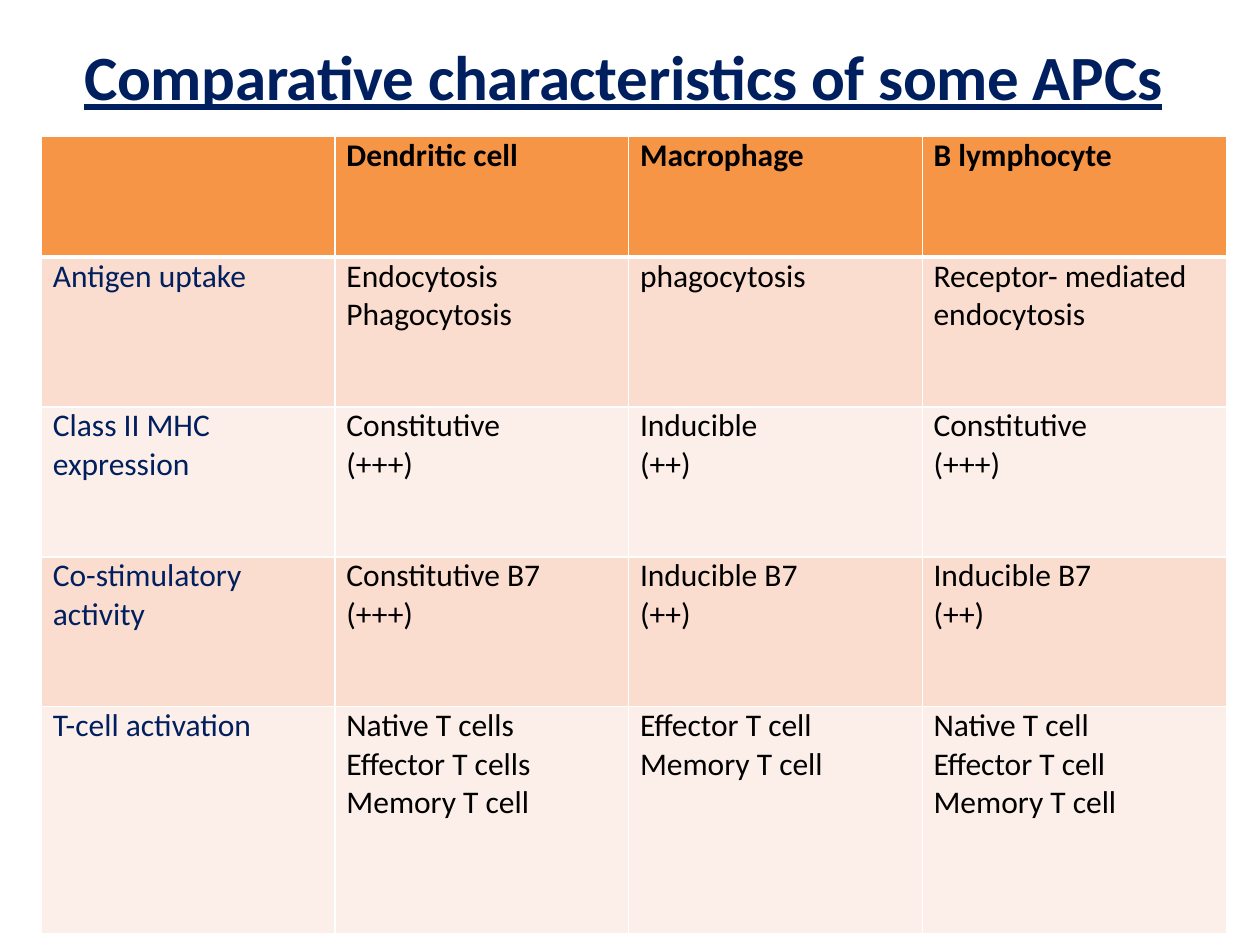
from dataclasses import dataclass

from lxml.etree import SubElement
from pptx import Presentation
from pptx.dml.color import RGBColor
from pptx.enum.text import MSO_ANCHOR, PP_ALIGN
from pptx.oxml.ns import qn
from pptx.util import Inches, Pt


@dataclass(frozen=True)
class Theme:
    font: str = "Calibri"
    navy: str = "001F5F"
    black: str = "000000"
    white: str = "FFFFFF"
    head: str = "F79546"
    bands: tuple = ("FBDDCF", "FCEEE9")
    title: int = 36
    body: int = 18
    rule: int = 1
    thick: int = 3


# Table content: one tuple per row, "\n" marks a new line in a cell
ROWS = [
    ("", "Dendritic cell", "Macrophage", "B lymphocyte"),
    ("Antigen uptake", "Endocytosis\nPhagocytosis", "phagocytosis",
     "Receptor- mediated\nendocytosis"),
    ("Class II MHC\nexpression", "Constitutive\n(+++)", "Inducible\n(++)",
     "Constitutive\n(+++)"),
    ("Co-stimulatory\nactivity", "Constitutive B7\n(+++)",
     "Inducible B7\n(++)", "Inducible B7\n(++)"),
    ("T-cell activation", "Native T cells\nEffector T cells\nMemory T cell",
     "Effector T cell\nMemory T cell",
     "Native T cell\nEffector T cell\nMemory T cell"),
]
WIDTHS = [2.33] * 3 + [2.42]
HEIGHTS = [0.96] + [1.19] * 3 + [1.8]


class Deck:
    def __init__(self, theme):
        self.theme = theme
        self.prs = Presentation()
        self.prs.slide_width = Inches(10)
        self.prs.slide_height = Inches(7.5)
        self.slide = self.prs.slides.add_slide(self.prs.slide_layouts[5])

    def run(self, para, text, size, color, bold=False):
        run = para.add_run()
        run.text = text
        font = run.font
        font.name, font.size, font.bold = self.theme.font, Pt(size), bold
        font.color.rgb = RGBColor.from_string(color)
        return run

    def title(self, text, left, top, width, height):
        box = self.slide.shapes.title
        box.left, box.top = Inches(left), Inches(top)
        box.width, box.height = Inches(width), Inches(height)
        frame = box.text_frame
        frame.word_wrap = True
        frame.vertical_anchor = MSO_ANCHOR.TOP
        frame.margin_left = Inches(0.17)
        frame.margin_top = frame.margin_right = frame.margin_bottom = 0
        para = frame.paragraphs[0]
        para.alignment = PP_ALIGN.LEFT
        run = self.run(para, text, self.theme.title, self.theme.navy, True)
        run.font.underline = True
        # Slightly tightened letter spacing, in hundredths of a point
        run.font._element.set("spc", "-16")

    def border(self, cell, side, width):
        line = SubElement(cell._tc.get_or_add_tcPr(), qn(f"a:ln{side}"),
                          w=str(Pt(width)))
        fill = SubElement(line, qn("a:solidFill"))
        SubElement(fill, qn("a:srgbClr"), val=self.theme.white)

    def cell(self, cell, text, row, col):
        look = self.theme
        # Borders come before the fill in the cell properties
        for side in "LRTB":
            heavy = (row, side) in ((0, "B"), (1, "T"))
            self.border(cell, side, look.thick if heavy else look.rule)
        cell.fill.solid()
        shade = look.bands[(row - 1) % 2] if row else look.head
        cell.fill.fore_color.rgb = RGBColor.from_string(shade)
        cell.margin_left = Inches(0.09)
        cell.margin_top = cell.margin_right = cell.margin_bottom = 0
        if not text:
            return
        para = cell.text_frame.paragraphs[0]
        color = look.black if col else look.navy
        for i, line in enumerate(text.split("\n")):
            if i:
                para.add_line_break()
            self.run(para, line, look.body, color, row == 0)

    def table(self, rows, left, top, widths, heights):
        grid = self.slide.shapes.add_table(
            len(rows), len(widths), Inches(left), Inches(top),
            Inches(sum(widths)), Inches(sum(heights))).table
        for col, width in zip(grid.columns, widths):
            col.width = Inches(width)
        for row, height in zip(grid.rows, heights):
            row.height = Inches(height)
        for r, texts in enumerate(rows):
            for c, text in enumerate(texts):
                self.cell(grid.cell(r, c), text, r, c)


def main():
    deck = Deck(Theme())
    # Heading
    deck.title("Comparative characteristics of some APCs", 0.5, 0.3, 9, 1.25)
    # Comparison of the three cell types
    deck.table(ROWS, 0.33, 1.08, WIDTHS, HEIGHTS)
    deck.prs.save("out.pptx")


if __name__ == "__main__":
    main()
